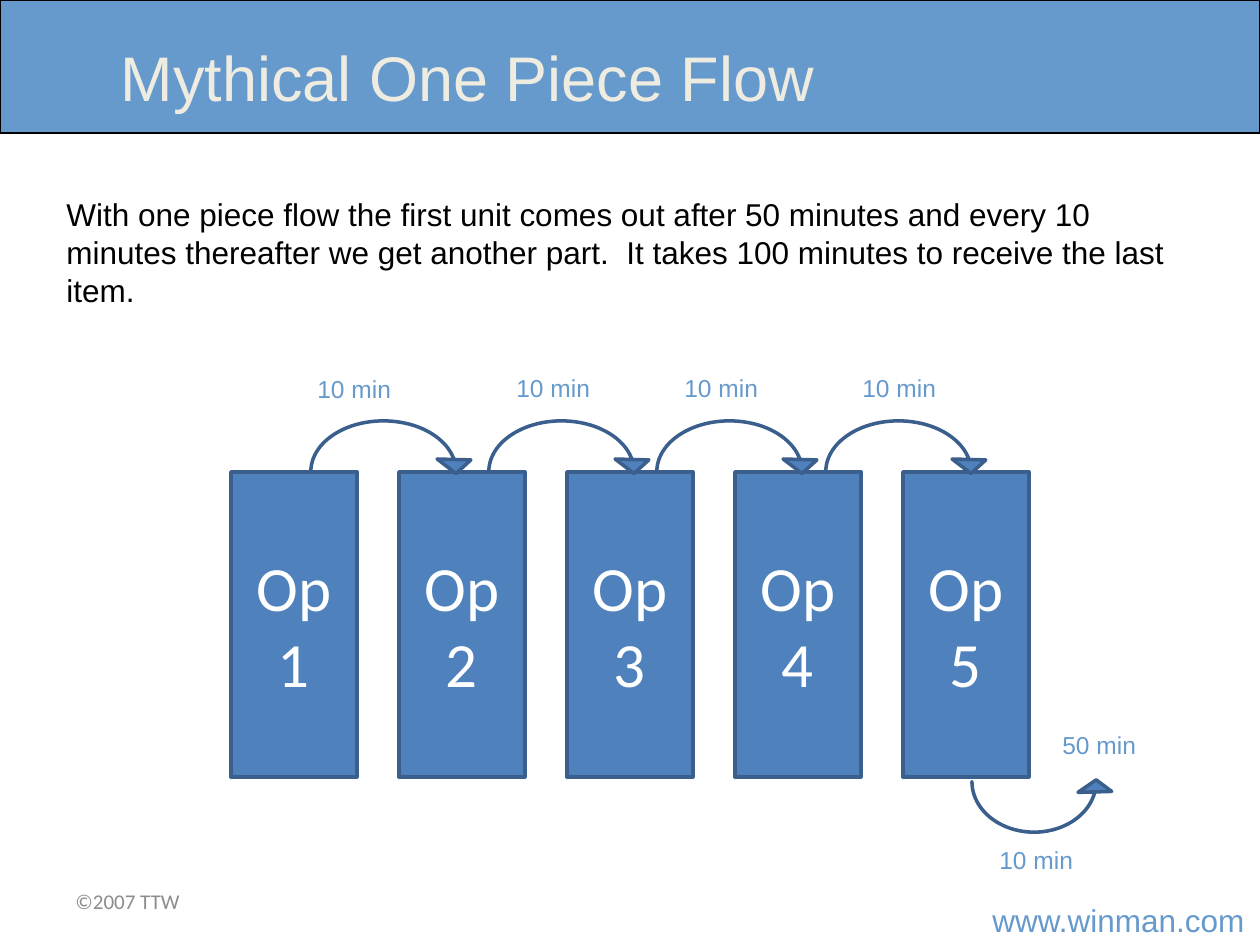
import pptx
import pptx.dml.color
import pptx.enum.shapes
import pptx.enum.text
import pptx.oxml.ns
import pptx.util

RGBColor = pptx.dml.color.RGBColor
SHAPES = pptx.enum.shapes.MSO_SHAPE
ANCHOR = pptx.enum.text.MSO_ANCHOR
ALIGN = pptx.enum.text.PP_ALIGN
AUTO_SIZE = pptx.enum.text.MSO_AUTO_SIZE

SKY = RGBColor(0x66, 0x99, 0xCC)
BLUE = RGBColor(0x4F, 0x81, 0xBD)
NAVY = RGBColor(0x3A, 0x5F, 0x8C)
CREAM = RGBColor(0xEE, 0xEC, 0xE1)
GRAY = RGBColor(0x8C, 0x8C, 0x8C)
BLACK = RGBColor(0, 0, 0)
WHITE = RGBColor(255, 255, 255)

EMU_PER_PX = 914400 / 126

TITLE = "Mythical One Piece Flow"
EXPLANATION = (
    "With one piece flow the first unit comes out after 50 minutes and every 10 "
    "minutes thereafter we get another part.  It takes 100 minutes to receive the last item."
)
COPYRIGHT = "©2007 TTW"
WEBSITE = "www.winman.com"
OPERATIONS = ["Op 1", "Op 2", "Op 3", "Op 4", "Op 5"]
TIME_LABELS = [
    ("10 min", 305, 368),
    ("10 min", 504, 367),
    ("10 min", 672, 367),
    ("10 min", 850, 367),
    ("10 min", 987, 839),
    ("50 min", 1050, 724),
]
TRANSFER_LEFTS = [294, 472, 640, 809]
ARROW_ADJUSTMENTS = [0, 6.724, 210.208, 108, 0.125]

OPERATION_LEFT, OPERATION_TOP, OPERATION_PITCH = 231, 472, 168
OPERATION_WIDTH, OPERATION_HEIGHT = 126, 305

TITLE_FONT = {"name": "Arial", "size": 36, "color": CREAM}
BODY_FONT = {"name": "Arial", "size": 18, "color": BLACK}
LABEL_FONT = {"name": "Arial", "size": 14, "color": SKY}
WEBSITE_FONT = {"name": "Arial", "size": 18, "color": SKY}
COPYRIGHT_FONT = {"name": "Calibri", "size": 12, "color": GRAY}
OPERATION_FONT = {"name": "Calibri", "size": 36, "color": WHITE}


def px(*lengths):
    return [pptx.util.Emu(round(length * EMU_PER_PX)) for length in lengths]


def write(shape, text, font, align=ALIGN.LEFT, **frame_format):
    frame = shape.text_frame
    frame_values = {"word_wrap": True, "vertical_anchor": ANCHOR.TOP, **frame_format}
    for name, value in frame_values.items():
        setattr(frame, name, value)
    paragraph = frame.paragraphs[0]
    paragraph.alignment = align
    run = paragraph.add_run()
    run.text = text
    run.font.color.rgb = font["color"]
    for name, value in {"name": font["name"], "size": pptx.util.Pt(font["size"])}.items():
        setattr(run.font, name, value)


def add_text(slide, box, text, font, **frame_format):
    write(slide.shapes.add_textbox(*px(*box)), text, font, **frame_format)


def add_filled(slide, kind, box, fill=BLUE, line=NAVY, line_width=2):
    shape = slide.shapes.add_shape(kind, *px(*box))
    shape.shadow.inherit = False
    shape.fill.solid()
    shape.fill.fore_color.rgb = fill
    shape.line.color.rgb = line
    shape.line.width = pptx.util.Pt(line_width)
    return shape


def add_curved_arrow(slide, box):
    arrow = add_filled(slide, SHAPES.CIRCULAR_ARROW, box)
    for index, value in enumerate(ARROW_ADJUSTMENTS):
        arrow.adjustments[index] = value
    return arrow


def main():
    presentation = pptx.Presentation()
    presentation.slide_width, presentation.slide_height = px(1260, 945)
    slide = presentation.slides.add_slide(presentation.slide_layouts[5])

    banner = add_filled(slide, SHAPES.RECTANGLE, (0, 0, 1260, 133), SKY, BLACK, 0.75)
    slide.shapes.element.insert(2, banner.element)

    title = slide.shapes.title
    for name, value in zip(("left", "top", "width", "height"), px(0, 32, 935, 89)):
        setattr(title, name, value)
    write(title, TITLE, TITLE_FONT, ALIGN.CENTER, auto_size=AUTO_SIZE.SHAPE_TO_FIT_TEXT)

    add_text(slide, (980, 895, 280, 50), WEBSITE, WEBSITE_FONT, word_wrap=False)
    add_text(slide, (63, 876, 294, 50), COPYRIGHT, COPYRIGHT_FONT, vertical_anchor=ANCHOR.MIDDLE)
    add_text(slide, (54, 189, 1153, 127), EXPLANATION, BODY_FONT)

    for index, name in enumerate(OPERATIONS):
        left = OPERATION_LEFT + index * OPERATION_PITCH
        box = (left, OPERATION_TOP, OPERATION_WIDTH, OPERATION_HEIGHT)
        operation = add_filled(slide, SHAPES.RECTANGLE, box)
        write(operation, name, OPERATION_FONT, ALIGN.CENTER, vertical_anchor=ANCHOR.MIDDLE)

    for left in TRANSFER_LEFTS:
        add_curved_arrow(slide, (left, 404, 179, 135))

    output_arrow = add_curved_arrow(slide, (955, 714, 158, 135))
    output_arrow.rotation = 180
    output_arrow.element.spPr.find(pptx.oxml.ns.qn("a:xfrm")).set("flipH", "1")

    for text, left, top in TIME_LABELS:
        add_text(slide, (left, top, 126, 43), text, LABEL_FONT)

    presentation.save("out.pptx")


if __name__ == "__main__":
    main()
